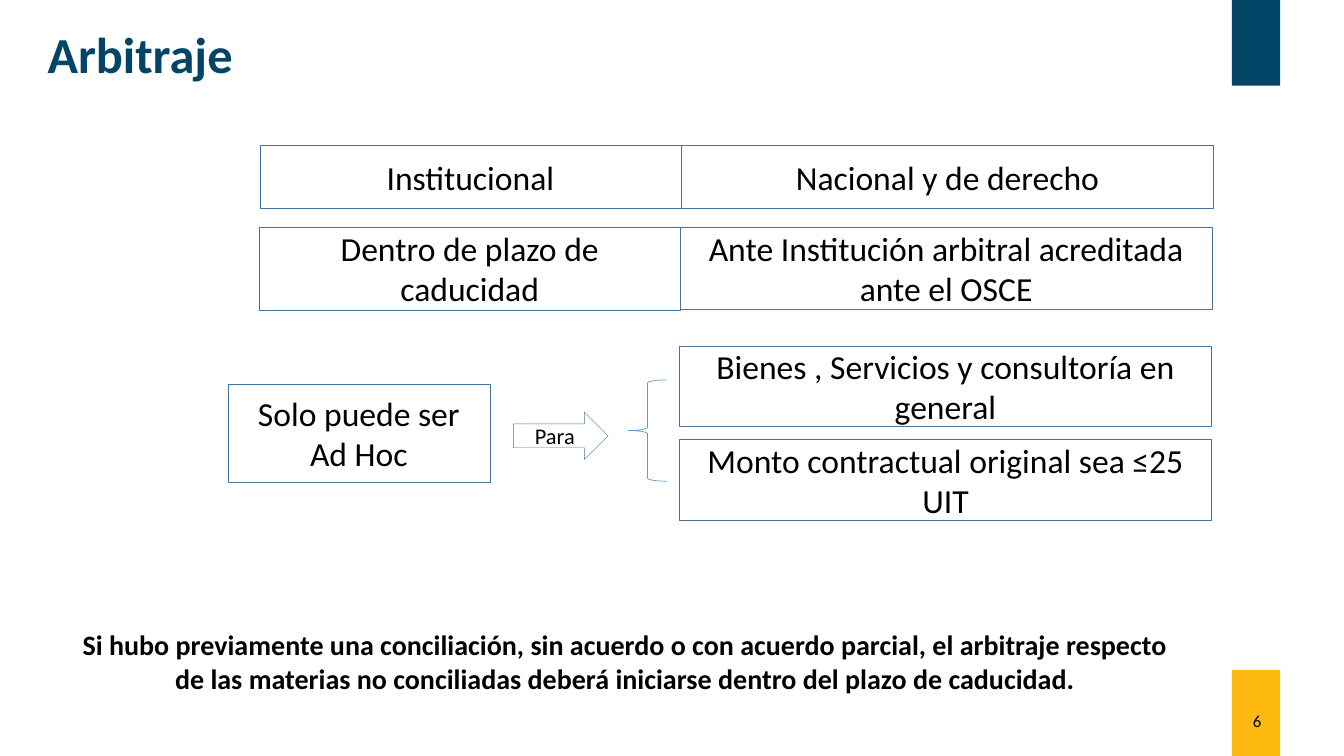
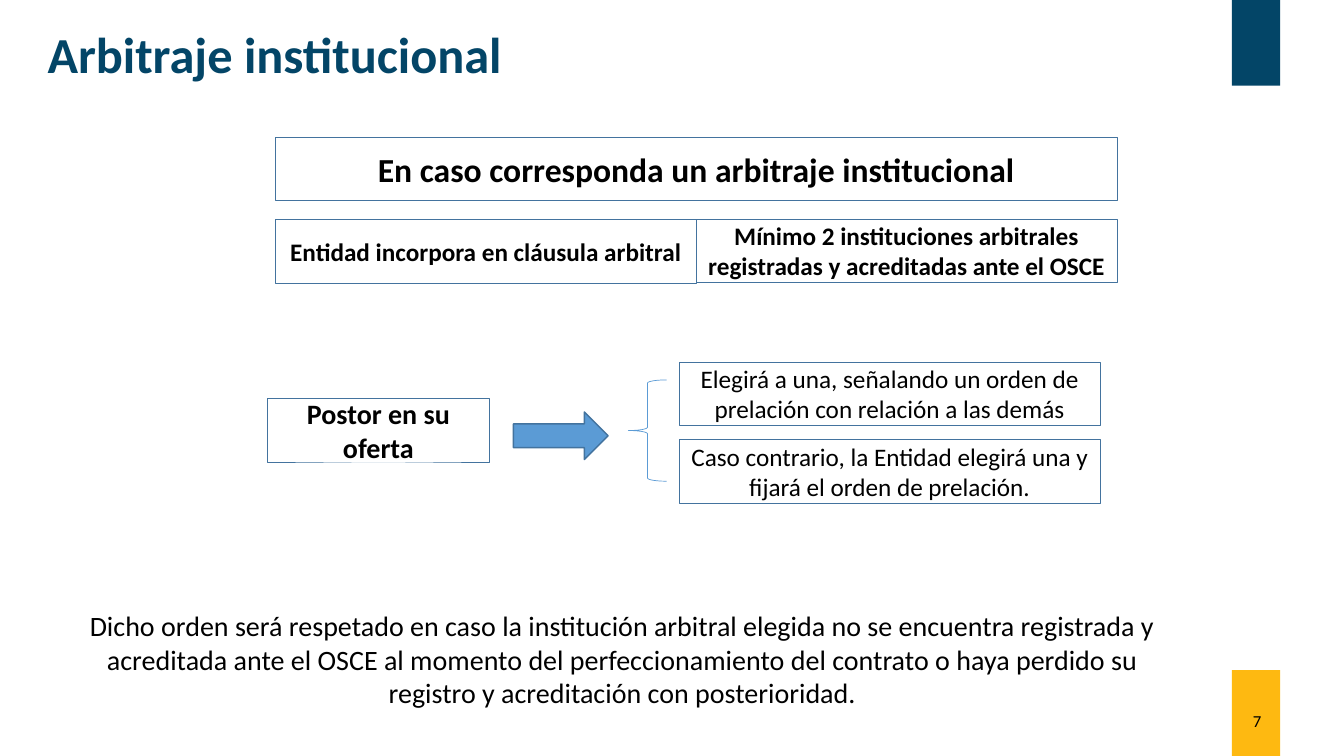
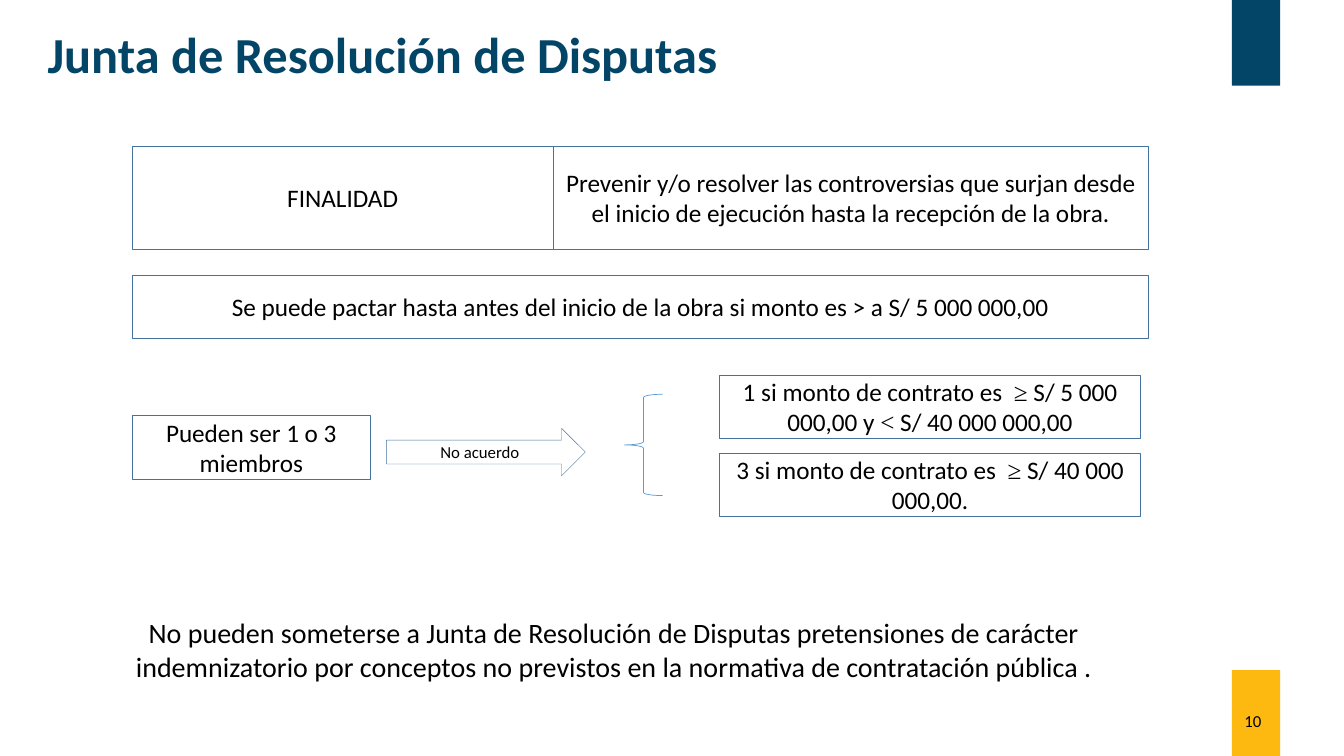
"""Build three slides on arbitration and dispute boards, on a grid of 100 columns by 100 rows."""
from itertools import groupby

from pptx import Presentation
from pptx.dml.color import RGBColor
from pptx.enum.shapes import MSO_SHAPE as Preset
from pptx.enum.text import MSO_ANCHOR as Anchor, PP_ALIGN as Align
from pptx.util import Inches, Pt

NAVY, GOLD, STEEL, SKY = "034567", "FEB911", "43739E", "5B9BD5"
WHITE, BLACK = "FFFFFF", "000000"
HALF, ROW, NOTE_WIDTH = 31.3, 8.4, 84

deck = Presentation()
deck.slide_width, deck.slide_height = Inches(13.33), Inches(7.5)
column, row = deck.slide_width / 100, deck.slide_height / 100


def draw(slide, preset, at, fill=None, line=None, weight=0.25):
    """Add a preset shape at (left, top, width, height) in grid units."""
    left, top, width, height = at
    shape = slide.shapes.add_shape(
        preset, int(left * column), int(top * row), int(width * column), int(height * row))
    shape.shadow.inherit = False
    for part, hue in ((shape.fill, fill), (shape.line.fill, line)):
        if hue:
            part.solid()
            part.fore_color.rgb = RGBColor.from_string(hue)
        else:
            part.background()
    if line:
        shape.line.width = Pt(weight)
    return shape


def write(shape, text, size=18, bold=False, color=BLACK, align=Align.CENTER, anchor=Anchor.MIDDLE):
    """Put text in a shape, with comparison signs in a serif font."""
    frame = shape.text_frame
    frame.word_wrap = True
    frame.vertical_anchor = anchor
    paragraph = frame.paragraphs[0]
    paragraph.alignment = align
    for is_sign, letters in groupby(text, lambda letter: letter in "≥˂"):
        run = paragraph.add_run()
        run.text = "".join(letters)
        run.font.name = "Times New Roman" if is_sign else "Calibri"
        run.font.size = Pt(size)
        run.font.bold = bold
        run.font.color.rgb = RGBColor.from_string(color)


topics = [
    dict(
        title="Arbitraje", number="6",
        boxes=[
            ("Institucional", (19.35, 19.2, HALF, ROW), 24, False),
            ("Nacional y de derecho", (50.7, 19.2, 39.6, ROW), 24, False),
            ("Dentro de plazo de caducidad", (19.3, 30, HALF, 11), 24, False),
            ("Ante Institución arbitral acreditada ante el OSCE", (50.6, 30, 39.6, 10.9), 24, False),
            ("Solo puede ser Ad Hoc", (16.95, 50.8, 19.5, 12.95), 24, False),
            ("Bienes , Servicios y consultoría en general", (50.55, 45.75, 39.6, 10.6), 24, False),
            ("Monto contractual original sea ≤25 UIT", (50.55, 58.15, 39.6, 10.7), 24, False),
        ],
        arrow=("Para", (38.2, 54.5, 7.05, 6.3), 16, WHITE, 0.25),
        brace=(46.75, 50.25),
        note=("Si hubo previamente una conciliación, sin acuerdo o con acuerdo parcial, el arbitraje "
              "respecto de las materias no conciliadas deberá iniciarse dentro del plazo de caducidad.",
              (4.5, 82.4, NOTE_WIDTH, 10.3), True),
    ),
    dict(
        title="Arbitraje institucional", number="7",
        boxes=[
            ("En caso corresponda un arbitraje institucional", (20.5, 18.15, 2 * HALF, ROW), 24, True),
            ("Entidad incorpora en cláusula arbitral", (20.5, 29.05, HALF, ROW), 18, True),
            ("Mínimo 2 instituciones arbitrales registradas y acreditadas ante el OSCE",
             (20.5 + HALF, 28.95, HALF, ROW), 18, True),
            ("Postor en su oferta", (19.9, 52.7, 16.5, ROW), 20, True),
            ("Elegirá a una, señalando un orden de prelación con relación a las demás",
             (50.55, 47.85, HALF, ROW), 18, False),
            ("Caso contrario, la Entidad elegirá una y fijará el orden de prelación.",
             (50.55, 58.15, HALF, ROW), 18, False),
        ],
        arrow=("", (38.2, 54.5, 7.05, 6.3), 16, SKY, 1),
        brace=(46.75, 50.25),
        note=("Dicho orden será respetado en caso la institución arbitral elegida no se encuentra "
              "registrada y acreditada ante el OSCE al momento del perfeccionamiento del contrato "
              "o haya perdido su registro y acreditación con posterioridad.",
              (4.3, 79.85, NOTE_WIDTH, 14.8), False),
    ),
    dict(
        title="Junta de Resolución de Disputas", number="10",
        boxes=[
            ("FINALIDAD", (9.85, 19.35, HALF, 13.6), 18, False),
            ("Prevenir y/o resolver las controversias que surjan desde el inicio de ejecución "
             "hasta la recepción de la obra.", (9.85 + HALF, 19.35, 44.3, 13.6), 18, False),
            ("Se puede pactar hasta antes del inicio de la obra si monto es ˃ a S/ 5 000 000,00",
             (9.85, 36.4, HALF + 44.3, ROW), 18, False),
            ("Pueden ser 1 o 3 miembros", (9.85, 54.95, 17.7, ROW), 18, False),
            ("1 si monto de contrato es  ≥ S/ 5 000 000,00 y ˂ S/ 40 000 000,00",
             (53.55, 49.6, HALF, ROW), 18, False),
            ("3 si monto de contrato es  ≥ S/ 40 000 000,00.", (53.55, 59.9, HALF, ROW), 18, False),
        ],
        arrow=("No acuerdo", (28.75, 56.65, 14.8, 6.3), 12, WHITE, 0.25),
        brace=(46.45, 52.15),
        note=("No pueden someterse a Junta de Resolución de Disputas pretensiones de carácter "
              "indemnizatorio por conceptos no previstos en la normativa de contratación pública .",
              (5.2, 80.8, 80.95, 10.3), False),
    ),
]

for topic in topics:
    slide = deck.slides.add_slide(deck.slide_layouts[6])
    for band_top, band_color in ((0, NAVY), (88.65, GOLD)):
        draw(slide, Preset.RECTANGLE, (91.65, band_top, 3.6, 11.35), band_color)
    heading = draw(slide, Preset.RECTANGLE, (2.8, 2.4, 85.8, 9.45))
    write(heading, topic["title"], size=36, bold=True, color=NAVY, align=Align.LEFT, anchor=Anchor.TOP)
    page_number = draw(slide, Preset.RECTANGLE, (71.25, 92.7, 23.35, 5.3))
    write(page_number, topic["number"], size=12, align=Align.RIGHT)

    for text, at, size, bold in topic["boxes"]:
        write(draw(slide, Preset.RECTANGLE, at, WHITE, STEEL), text, size=size, bold=bold)

    label, at, size, fill, weight = topic["arrow"]
    write(draw(slide, Preset.RIGHT_ARROW, at, fill, STEEL, weight), label, size=size)
    draw(slide, Preset.LEFT_BRACE, (*topic["brace"], 2.85, 13.4), line=SKY, weight=0.5)

    text, at, bold = topic["note"]
    write(draw(slide, Preset.RECTANGLE, at), text, size=20, bold=bold, anchor=Anchor.TOP)

deck.save("out.pptx")
